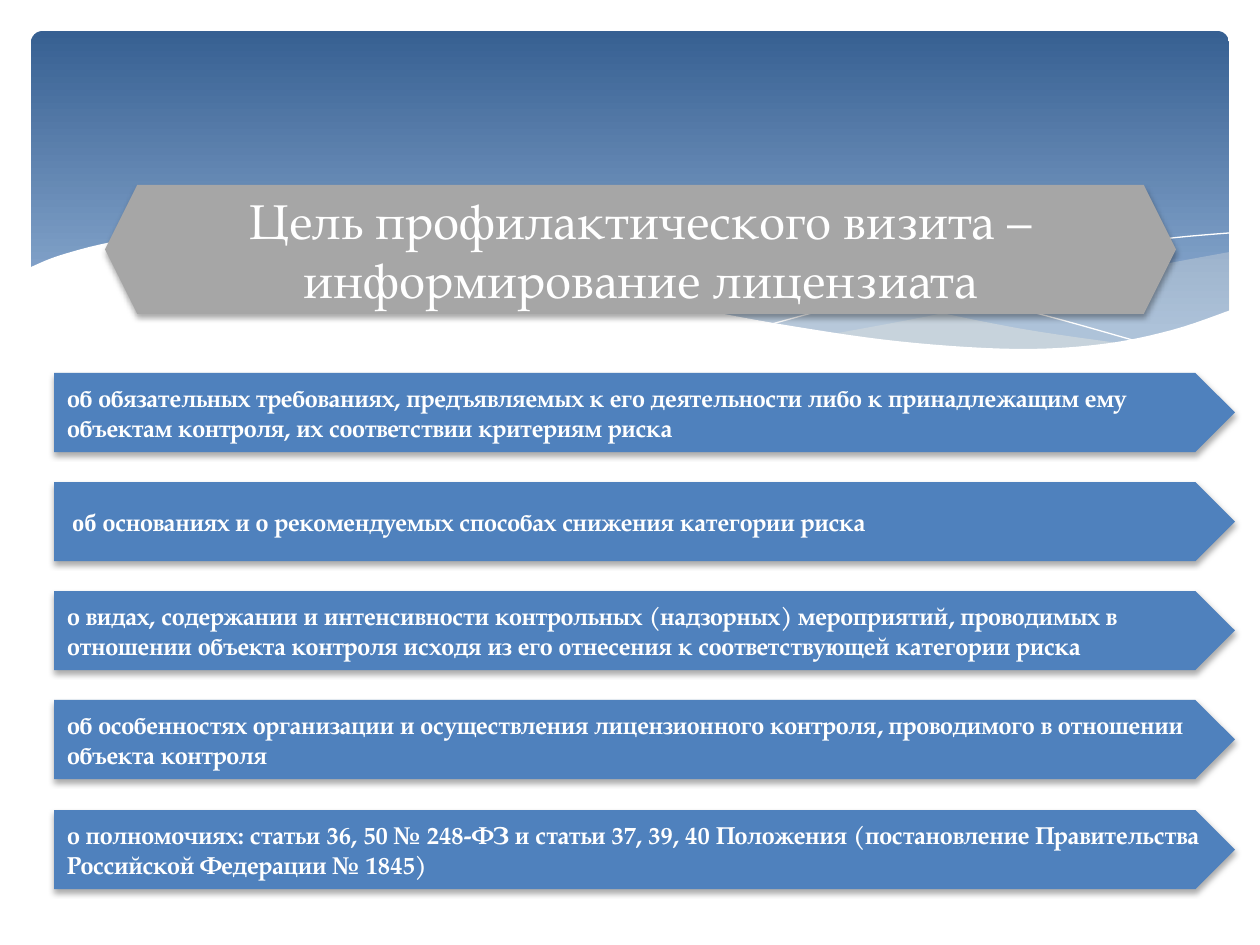
import dataclasses
from typing import Any

import lxml.etree
import pptx
import pptx.dml.color
import pptx.enum.shapes
import pptx.enum.text
import pptx.oxml.ns
import pptx.util

PX = 914400 / 126
SHAPE = pptx.enum.shapes.MSO_SHAPE
ALIGN = pptx.enum.text.PP_ALIGN
qn = pptx.oxml.ns.qn
Points = list[tuple[int, int]]


@dataclasses.dataclass(frozen=True)
class Theme:
    sky_top: str = "376092"
    sky_bottom: str = "95B3D7"
    mist: str = "EEECE1"
    white: str = "FFFFFF"
    bar: str = "4F81BD"
    banner: str = "A6A6A6"
    shadow: str = "000000"
    font: str = "TeX Gyre Pagella"
    lead_font: str = "Times New Roman"
    title_size: int = 28
    bar_size: int = 14


@dataclasses.dataclass(frozen=True)
class Wave:
    edges: list[Points]
    color: str
    alpha: int = 100
    outline: bool = False


@dataclasses.dataclass(frozen=True)
class Label:
    text: str
    lead: str = ""
    inset: int = 13


THEME = Theme()

WAVES = [
    Wave([[(833, 334), (949, 312), (1085, 281), (1160, 265), (1230, 252)],
          [(1230, 311), (1187, 326), (1130, 340), (1063, 349), (998, 350),
           (922, 345), (833, 334)]], THEME.mist, 29),
    Wave([[(1125, 344), (1017, 328), (890, 302), (793, 280), (682, 256),
           (586, 241), (479, 233), (413, 236), (360, 241)],
          [(360, 241), (456, 256), (566, 280), (713, 312), (838, 335),
           (942, 348), (1017, 350), (1080, 349), (1125, 344)]], THEME.mist, 40),
    Wave([[(389, 246), (453, 238), (488, 236), (546, 236), (643, 242),
           (733, 252), (838, 268), (958, 294), (1047, 316), (1143, 343)]],
         THEME.white, outline=True),
    Wave([[(772, 324), (876, 296), (978, 272), (1091, 251), (1164, 239),
           (1229, 233)]], THEME.white, outline=True),
    Wave([[(29, 268), (58, 256), (107, 243), (166, 234), (243, 232),
           (341, 237), (428, 248), (563, 277), (699, 309), (816, 330),
           (915, 343), (1019, 349), (1103, 344), (1172, 330), (1231, 310)],
          [(1231, 415), (29, 415)]], THEME.white),
]

TITLE = Label("Цель профилактического визита – информирование лицензиата")

BARS = [
    Label("об обязательных требованиях, предъявляемых к его деятельности либо "
          "к принадлежащим ему объектам контроля, их соответствии критериям риска"),
    Label("основаниях и о рекомендуемых способах снижения категории риска",
          lead="об ", inset=18),
    Label("о видах, содержании и интенсивности контрольных (надзорных) "
          "мероприятий, проводимых в отношении объекта контроля исходя из его "
          "отнесения к соответствующей категории риска"),
    Label("об особенностях организации и осуществления лицензионного контроля, "
          "проводимого в отношении объекта контроля"),
    Label("о полномочиях: статьи 36, 50 № 248-ФЗ и статьи 37, 39, 40 Положения "
          "(постановление Правительства Российской Федерации № 1845)"),
]


def px(n: float) -> int:
    return round(n * PX)


def rgb(color: str) -> pptx.dml.color.RGBColor:
    return pptx.dml.color.RGBColor.from_string(color)


def set_format(target: Any, values: dict[str, Any]) -> None:
    for name, value in values.items():
        setattr(target, name, value)


def smooth_edge(points: Points, steps: int = 6) -> list[tuple[float, float]]:
    padded = [points[0], *points, points[-1]]
    curve = [points[0]]
    for a, b, c, d in zip(padded, padded[1:], padded[2:], padded[3:]):
        for i in range(1, steps + 1):
            t = i / steps
            curve.append(tuple(
                (2 * q + (r - p) * t + (2 * p - 5 * q + 4 * r - w) * t ** 2
                 + (3 * q - p - 3 * r + w) * t ** 3) / 2
                for p, q, r, w in zip(a, b, c, d)))
    return curve


def add_wave(s: Any, wave: Wave) -> None:
    points = [(px(x), px(y)) for edge in wave.edges for x, y in smooth_edge(edge)]
    builder = s.shapes.build_freeform(*points[0])
    builder.add_line_segments(points[1:], close=not wave.outline)
    sp = builder.convert_to_shape()
    sp.shadow.inherit = False
    if wave.outline:
        sp.fill.background()
        sp.line.color.rgb = rgb(wave.color)
        sp.line.width = 0
        return
    sp.line.fill.background()
    sp.fill.solid()
    sp.fill.fore_color.rgb = rgb(wave.color)
    if wave.alpha < 100:
        clr = sp._element.spPr.find(".//" + qn("a:srgbClr"))
        lxml.etree.SubElement(clr, qn("a:alpha"), val=str(wave.alpha * 1000))


def add_shape(s: Any, kind: Any, x: int, y: int, w: int, h: int) -> Any:
    sp = s.shapes.add_shape(kind, px(x), px(y), px(w), px(h))
    sp.shadow.inherit = False
    sp.line.fill.background()
    return sp


def add_sky(s: Any) -> None:
    sp = add_shape(s, SHAPE.ROUNDED_RECTANGLE, 31, 31, 1198, 340)
    sp.adjustments[0] = 0.034
    sp.fill.gradient()
    sp.fill.gradient_angle = 270
    stops = [(0, THEME.sky_top), (0.9, THEME.sky_bottom)]
    for stop, (position, color) in zip(sp.fill.gradient_stops, stops):
        stop.position = position
        stop.color.rgb = rgb(color)


def add_shadow(sp: Any) -> None:
    effects = sp._element.spPr.find(qn("a:effectLst"))
    outer = lxml.etree.SubElement(effects, qn("a:outerShdw"), blurRad="44450",
                                  dist="27940", dir="5400000", rotWithShape="0")
    clr = lxml.etree.SubElement(outer, qn("a:srgbClr"), val=THEME.shadow)
    lxml.etree.SubElement(clr, qn("a:alpha"), val="32000")


def add_label(s: Any, kind: Any, box: tuple[int, int, int, int], label: Label,
              color: str, size: int, bold: bool, align: Any) -> None:
    sp = add_shape(s, kind, *box)
    sp.fill.solid()
    sp.fill.fore_color.rgb = rgb(color)
    add_shadow(sp)
    tf = sp.text_frame
    set_format(tf, {"word_wrap": True, "margin_left": px(label.inset),
                    "vertical_anchor": pptx.enum.text.MSO_ANCHOR.MIDDLE})
    p = tf.paragraphs[0]
    p.alignment = align
    for text, font in [(label.lead, THEME.lead_font), (label.text, THEME.font)]:
        if text:
            r = p.add_run()
            r.text = text
            set_format(r.font, {"name": font, "size": pptx.util.Pt(size), "bold": bold})
            r.font.color.rgb = rgb(THEME.white)


def main() -> None:
    prs = pptx.Presentation()
    set_format(prs, {"slide_width": px(1260), "slide_height": px(945)})
    s = prs.slides.add_slide(prs.slide_layouts[6])
    add_sky(s)
    for wave in WAVES:
        add_wave(s, wave)
    first, last = 373, 810
    for i, label in enumerate(BARS):
        y = first + i * (last - first) // (len(BARS) - 1)
        add_label(s, SHAPE.PENTAGON, (54, y, 1181, 79), label,
                  THEME.bar, THEME.bar_size, True, ALIGN.LEFT)
    add_label(s, SHAPE.HEXAGON, (105, 185, 1071, 129), TITLE,
              THEME.banner, THEME.title_size, False, ALIGN.CENTER)
    prs.save("out.pptx")


if __name__ == "__main__":
    main()
